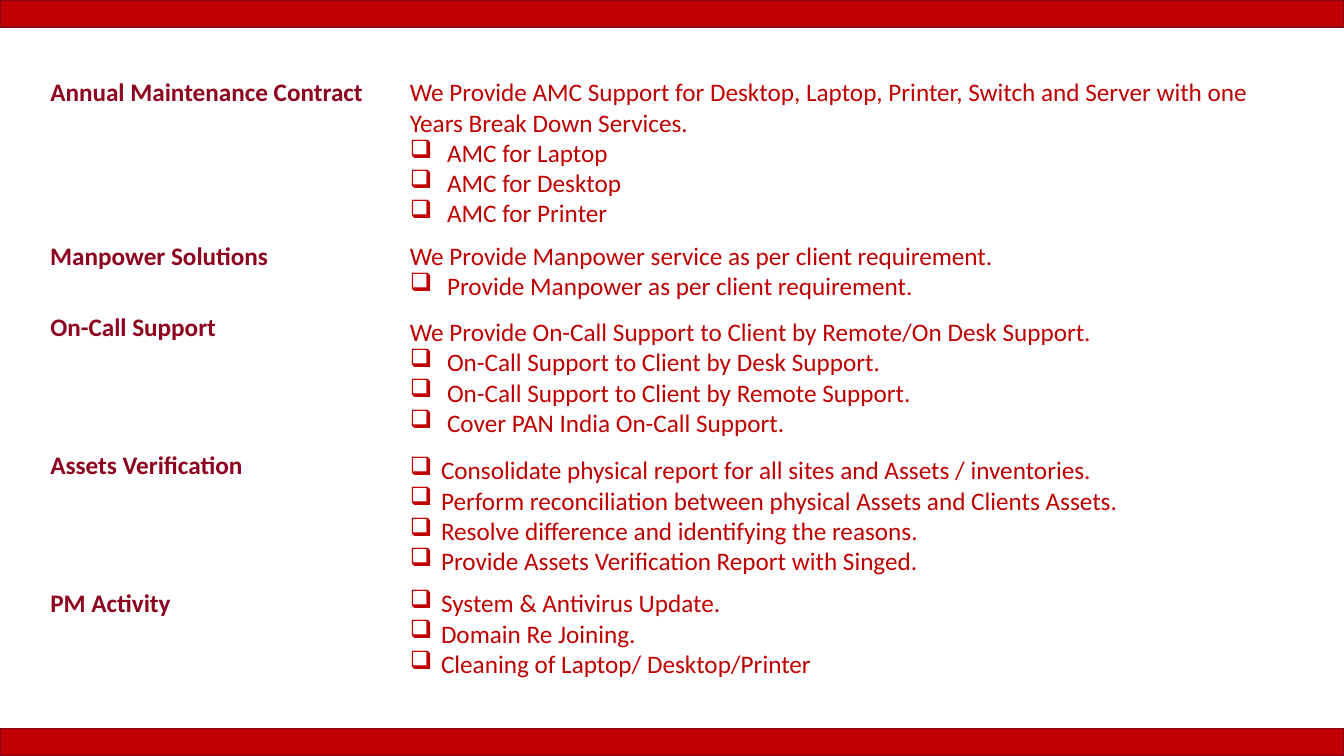
from dataclasses import dataclass

from lxml import etree
from pptx import Presentation, util as u
from pptx.dml.color import RGBColor
from pptx.enum import shapes, text
from pptx.oxml import ns


@dataclass(frozen=True)
class Theme:
    red: RGBColor = RGBColor(0xC0, 0x00, 0x00)
    maroon: RGBColor = RGBColor(0x8D, 0x02, 0x1F)
    font: str = "Calibri"
    body_size: u.Pt = u.Pt(18)
    border: u.Pt = u.Pt(1)
    bullet: str = "❑"


class Page:
    COLUMNS, ROWS = 40, 25

    def __init__(self, deck, theme):
        self.theme = theme
        self.column = deck.slide_width / self.COLUMNS
        self.row = deck.slide_height / self.ROWS
        self.slide = deck.slides.add_slide(deck.slide_layouts[6])

    def place(self, column, row, columns, rows):
        return (round(column * self.column), round(row * self.row),
                round(columns * self.column), round(rows * self.row))

    def band(self, row, rows):
        bar = self.slide.shapes.add_shape(
            shapes.MSO_SHAPE.RECTANGLE, *self.place(0, row, self.COLUMNS, rows))
        bar.shadow.inherit = False
        bar.fill.solid()
        bar.fill.fore_color.rgb = self.theme.red
        bar.line.color.rgb = self.theme.maroon
        bar.line.width = self.theme.border

    def text_frame(self, area, wrap):
        frame = self.slide.shapes.add_textbox(*self.place(*area)).text_frame
        frame.word_wrap = wrap
        frame.auto_size = text.MSO_AUTO_SIZE.SHAPE_TO_FIT_TEXT
        return frame

    def set_words(self, paragraph, words, color, bold=False):
        paragraph.text = words
        font = paragraph.font
        font.name, font.size = self.theme.font, self.theme.body_size
        font.color.rgb, font.bold = color, bold

    def heading(self, row, columns, words):
        frame = self.text_frame((1.2, row, columns, 1.33), False)
        self.set_words(frame.paragraphs[0], words, self.theme.maroon, bold=True)

    def details(self, row, rows, intro, points):
        frame = self.text_frame((11.9, row, 26.2, rows), True)
        indent = u.Inches(0.37 if intro else 0.31)
        lines = [intro, *points] if intro else points
        for number, line in enumerate(lines):
            paragraph = frame.add_paragraph() if number else frame.paragraphs[0]
            self.set_words(paragraph, line, self.theme.red)
            if line != intro:
                self.bullet(paragraph, indent)

    def bullet(self, paragraph, indent):
        properties = paragraph._p.get_or_add_pPr()
        properties.set("marL", str(indent))
        properties.set("indent", str(-indent))
        mark = etree.Element(ns.qn("a:buChar"), char=self.theme.bullet)
        properties.insert_element_before(mark, "a:tabLst", "a:defRPr", "a:extLst")


SERVICES = [
    ("Annual Maintenance Contract", 2.37, 10, 2.37, 5.4,
     "We Provide AMC Support for Desktop, Laptop, Printer, Switch and Server "
     "with one Years Break Down Services.",
     ["AMC for Laptop", "AMC for Desktop", "AMC for Printer"]),
    ("Manpower Solutions", 7.77, 7.14, 7.77, 2.37,
     "We Provide Manpower service as per client requirement.",
     ["Provide Manpower as per client requirement."]),
    ("On-Call Support", 10.13, 5.58, 10.3, 4.37,
     "We Provide On-Call Support to Client by Remote/On Desk Support.",
     ["On-Call Support to Client by Desk Support.",
      "On-Call Support to Client by Remote Support.",
      "Cover PAN India On-Call Support."]),
    ("Assets Verification", 14.7, 6.36, 14.87, 4.37, None,
     ["Consolidate physical report for all sites and Assets / inventories.",
      "Perform reconciliation between physical Assets and Clients Assets.",
      "Resolve difference and identifying the reasons.",
      "Provide Assets Verification Report with Singed."]),
    ("PM Activity", 19.27, 4.23, 19.27, 3.37, None,
     ["System & Antivirus Update.", "Domain Re Joining.",
      "Cleaning of Laptop/ Desktop/Printer"]),
]


def main():
    deck = Presentation()
    deck.slide_width, deck.slide_height = u.Inches(13.33), u.Inches(7.5)
    page = Page(deck, Theme())
    band_rows = 0.9
    for row in (0, page.ROWS - band_rows):
        page.band(row, band_rows)
    for title, title_row, title_columns, row, rows, intro, points in SERVICES:
        page.heading(title_row, title_columns, title)
        page.details(row, rows, intro, points)
    deck.save("out.pptx")


if __name__ == "__main__":
    main()
